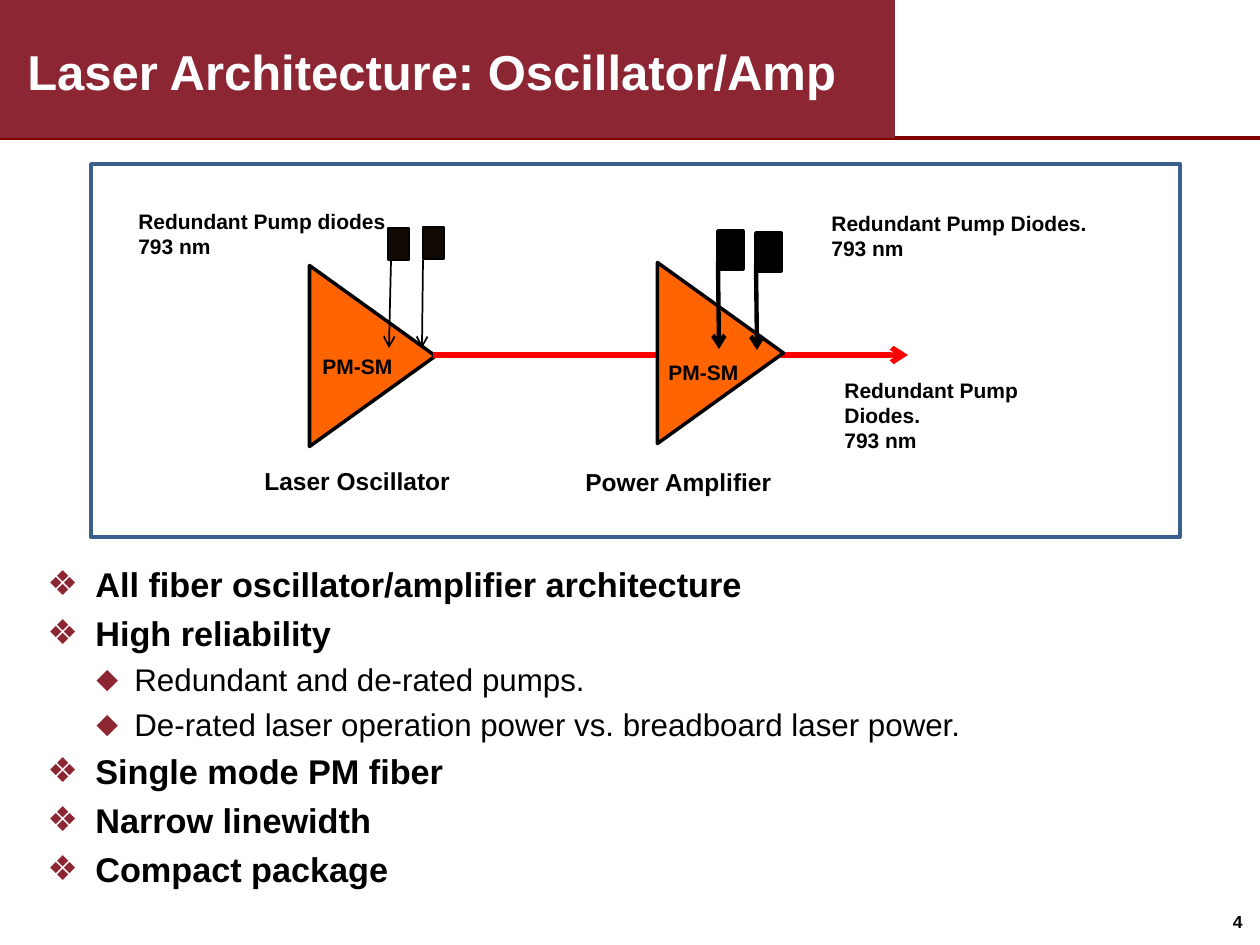
import pptx
import pptx.dml.color
import pptx.enum.shapes
import pptx.enum.text
import pptx.oxml
import pptx.oxml.ns
import pptx.util

SHAPE = pptx.enum.shapes.MSO_SHAPE
ALIGN = pptx.enum.text.PP_ALIGN
ANCHOR = pptx.enum.text.MSO_ANCHOR
AUTO_SIZE = pptx.enum.text.MSO_AUTO_SIZE
EMU_PER_PX = 914400 / 126
COLORS = {
    "maroon": "8C2633", "rule": "800000", "frame": "3A5F8C", "orange": "FF6400",
    "beam": "FF0000", "diode": "100904", "black": "000000", "white": "FFFFFF",
}


def px(n):
    return pptx.util.Emu(round(n * EMU_PER_PX))


def rgb(name):
    return pptx.dml.color.RGBColor.from_string(COLORS[name])


def add_xml(parent, tag, **attrs):
    el = pptx.oxml.parse_xml(f"<a:{tag} {pptx.oxml.ns.nsdecls('a')}/>")
    for key, value in attrs.items():
        el.set(key, value)
    parent.append(el)
    return el


class Deck:
    font = "Arial"

    def __init__(self, width, height):
        self.prs = pptx.Presentation()
        self.prs.slide_width, self.prs.slide_height = px(width), px(height)
        self.s = self.prs.slides.add_slide(self.prs.slide_layouts[6])

    def run(self, p, text, size, bold=True, color="black"):
        r = p.add_run()
        r.text = text
        style = {"name": self.font, "size": pptx.util.Pt(size), "bold": bold}
        for key, value in style.items():
            setattr(r.font, key, value)
        r.font.color.rgb = rgb(color)

    def shape(self, kind, box, fill=None, line=None, weight=1, rotation=0):
        sp = self.s.shapes.add_shape(kind, *map(px, box))
        sp.shadow.inherit = False
        sp.rotation = rotation
        if fill:
            sp.fill.solid()
            sp.fill.fore_color.rgb = rgb(fill)
        else:
            sp.fill.background()
        if line:
            sp.line.color.rgb = rgb(line)
            sp.line.width = pptx.util.Pt(weight)
        else:
            sp.line.fill.background()
        return sp

    def line(self, start, end, color, weight, arrow=False):
        cx = self.s.shapes.add_connector(
            pptx.enum.shapes.MSO_CONNECTOR.STRAIGHT, *map(px, start + end))
        cx.line.color.rgb = rgb(color)
        cx.line.width = pptx.util.Pt(weight)
        if arrow:
            ln = cx._element.spPr.find(pptx.oxml.ns.qn("a:ln"))
            add_xml(ln, "tailEnd", type="arrow")
        add_xml(cx._element.spPr, "effectLst")

    def title(self, box, text):
        tf = self.shape(SHAPE.RECTANGLE, box, "maroon").text_frame
        tf.vertical_anchor = ANCHOR.MIDDLE
        p = tf.paragraphs[0]
        p.alignment = ALIGN.LEFT
        p.line_spacing = pptx.util.Pt(36)
        p._p.get_or_add_pPr().set("marL", str(px(15)))
        self.run(p, text, 28, color="white")

    def label(self, box, lines, size=12, wrap=True, align=ALIGN.LEFT):
        tf = self.s.shapes.add_textbox(*map(px, box)).text_frame
        tf.word_wrap = wrap
        tf.auto_size = AUTO_SIZE.SHAPE_TO_FIT_TEXT
        for i, text in enumerate(lines):
            p = tf.add_paragraph() if i else tf.paragraphs[0]
            p.alignment = align
            self.run(p, text, size)

    def bullets(self, box, items):
        levels = [
            {"margin": 48, "hang": 48, "char": "❖", "size": 19.6, "bold": True, "gap": 4.5},
            {"margin": 87, "hang": 38, "char": "⬥", "size": 17.9, "bold": False, "gap": 4},
        ]
        tf = self.s.shapes.add_textbox(*map(px, box)).text_frame
        tf.word_wrap = True
        for i, (level, text) in enumerate(items):
            look = levels[level]
            p = tf.add_paragraph() if i else tf.paragraphs[0]
            p.level = level
            pPr = p._p.get_or_add_pPr()
            pPr.set("marL", str(px(look["margin"])))
            pPr.set("indent", str(-px(look["hang"])))
            add_xml(add_xml(pPr, "buClr"), "srgbClr", val=COLORS["maroon"])
            add_xml(pPr, "buFont", typeface=self.font)
            add_xml(pPr, "buChar", char=look["char"])
            if i:
                p.space_before = pptx.util.Pt(look["gap"])
            self.run(p, text, look["size"], look["bold"])

    def amplifier(self, box):
        self.shape(SHAPE.ISOSCELES_TRIANGLE, box, "orange", "black", 2, 90)

    def pump(self, box, start, end, fill, border, weight):
        self.line(start, end, "black", weight, arrow=True)
        self.shape(SHAPE.RECTANGLE, box, fill, "black", border)


def main():
    deck = Deck(1260, 945)
    deck.line((0, 138), (1260, 138), "rule", 2.25)
    deck.label((1174, 905, 81, 34), ["4"], 10, align=ALIGN.RIGHT)
    deck.title((0, 0, 895, 138), "Laser Architecture: Oscillator/Amp")
    deck.shape(SHAPE.RECTANGLE, (91, 164, 1089, 373), None, "frame", 2)

    deck.amplifier((282, 293, 181, 126))
    deck.line((433, 355), (908, 355), "beam", 3, arrow=True)
    deck.amplifier((630, 290, 181, 126))

    small = {"fill": "diode", "border": 1, "weight": 1}
    large = {"fill": "black", "border": 2, "weight": 2.5}
    for box, start, end, look in [
        ((388, 228, 21, 32), (391, 261), (389, 348), small),
        ((423, 227, 21, 32), (423, 260), (422, 348), small),
        ((718, 231, 25, 38), (718, 262), (719, 349), large),
        ((756, 233, 25, 38), (756, 265), (757, 350), large),
    ]:
        deck.pump(box, start, end, **look)

    wavelength = "793 nm"
    deck.label((126, 202, 275, 63), ["Redundant Pump diodes", wavelength])
    for box in [(819, 204, 306, 63), (832, 371, 273, 89)]:
        deck.label(box, ["Redundant Pump Diodes.", wavelength])
    for box in [(310, 347, 96, 38), (656, 353, 96, 38)]:
        deck.label(box, ["PM-SM"], wrap=False)
    deck.label((252, 460, 212, 43), ["Laser Oscillator"], 14, wrap=False)
    deck.label((573, 461, 213, 43), ["Power Amplifier"], 14, wrap=False)

    deck.bullets((35, 557, 1211, 306), [
        (0, "All fiber oscillator/amplifier architecture"),
        (0, "High reliability"),
        (1, "Redundant and de-rated pumps."),
        (1, "De-rated laser operation power vs. breadboard laser power."),
        (0, "Single mode PM fiber"),
        (0, "Narrow linewidth"),
        (0, "Compact package"),
    ])
    deck.prs.save("out.pptx")


if __name__ == "__main__":
    main()
